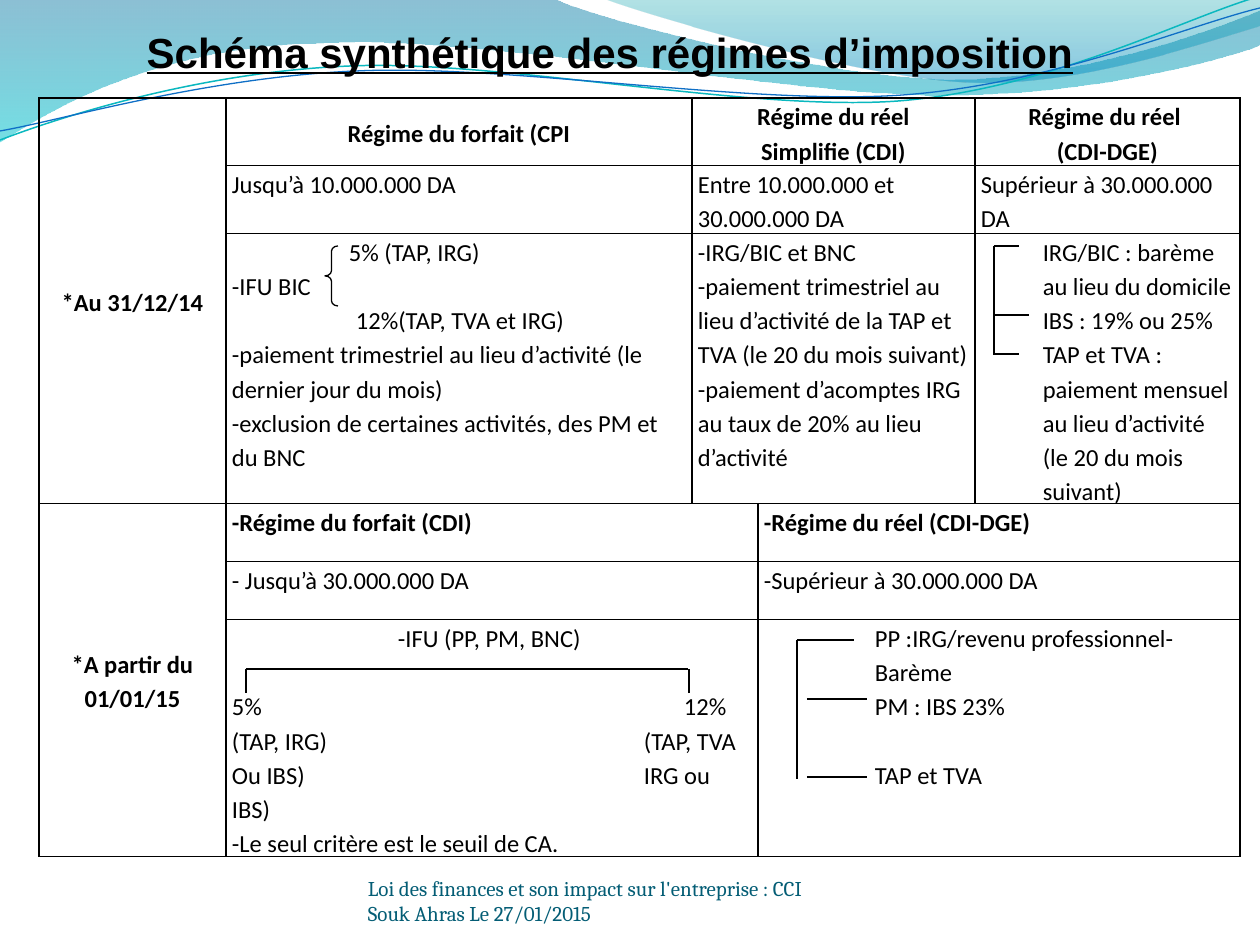
from dataclasses import dataclass

from lxml import etree
from pptx import Presentation
from pptx.dml.color import RGBColor
from pptx.enum.shapes import MSO_CONNECTOR, MSO_SHAPE
from pptx.enum.text import MSO_ANCHOR, PP_ALIGN
from pptx.oxml.ns import qn
from pptx.util import Emu, Pt

LEFT, CENTER = PP_ALIGN.LEFT, PP_ALIGN.CENTER
TOP, MIDDLE, BOTTOM = MSO_ANCHOR.TOP, MSO_ANCHOR.MIDDLE, MSO_ANCHOR.BOTTOM
STRAIGHT, LEFT_BRACE = MSO_CONNECTOR.STRAIGHT, MSO_SHAPE.LEFT_BRACE

CELL_INSET = 6
BLANK_LINE = 19.6  # points: one line of table text


def px(length):
    return Emu(round(length * 914400 / 126))


@dataclass(frozen=True)
class Theme:
    ink: str = "000000"
    footer_ink: str = "045D75"
    wave_teal: str = "0AB8BF"
    wave_blue: str = "0F6FC6"
    title_font: str = "Arial"
    table_font: str = "Calibri"
    footer_font: str = "Cambria"
    title_size: int = 24
    table_size: int = 14
    footer_size: int = 12
    border: float = 1
    rule: float = 0.75


@dataclass(frozen=True)
class Line:
    text: str
    indent: int = 0
    tab: int = 0
    before: float = 0


class SlideBuilder:
    def __init__(self, slide, theme):
        self.slide, self.theme = slide, theme

    def style(self, paragraph, font_name, size, color, bold=False, underline=None):
        font = paragraph.font
        font.name, font.size, font.bold = font_name, Pt(size), bold
        font.underline = underline
        font.color.rgb = RGBColor.from_string(color)

    def text(self, box, words, anchor, align, inset, **font):
        shape = self.slide.shapes.add_textbox(*map(px, box))
        frame = shape.text_frame
        frame.word_wrap, frame.vertical_anchor = True, anchor
        frame.margin_left = frame.margin_right = px(inset * 2)
        frame.margin_top = frame.margin_bottom = px(inset)
        paragraph = frame.paragraphs[0]
        paragraph.text, paragraph.alignment = words, align
        self.style(paragraph, **font)

    def outline(self, shape, color, width):
        shape.shadow.inherit = False
        shape.line.color.rgb = RGBColor.from_string(color)
        shape.line.width = Pt(width)

    def freeform(self, start, segments, closed):
        """Two numbers make a straight segment, six a Bézier curve."""
        points = [(px(x), px(y)) for segment in segments
                  for x, y in zip(segment[::2], segment[1::2])]
        builder = self.slide.shapes.build_freeform(*map(px, start))
        builder.add_line_segments(points, close=closed)
        shape = builder.convert_to_shape()
        shape.shadow.inherit = False
        # Gather the three points of each curve into one Bézier segment
        steps = iter(list(shape._element.iter(qn("a:lnTo"))))
        for segment in segments:
            step = next(steps)
            if len(segment) == 6:
                step.tag = qn("a:cubicBezTo")
                for extra in (next(steps), next(steps)):
                    step.append(extra[0])
                    extra.getparent().remove(extra)
        return shape

    def wave(self, start, segments, stops):
        shape = self.freeform(start, segments, True)
        shape.line.fill.background()
        shape.fill.gradient()
        shape.fill.gradient_angle = 270
        for stop, (position, color, _) in zip(shape.fill.gradient_stops, stops):
            stop.position = position
            stop.color.rgb = RGBColor.from_string(color)
        for node, (_, _, opacity) in zip(shape._element.iter(qn("a:srgbClr")), stops):
            etree.SubElement(node, qn("a:alpha"), val=str(opacity * 1000))

    def ribbon(self, start, segments, color, width):
        shape = self.freeform(start, segments, False)
        shape.fill.background()
        self.outline(shape, color, width)

    def connector(self, x1, y1, x2, y2):
        connector = self.slide.shapes.add_connector(STRAIGHT, px(x1), px(y1), px(x2), px(y2))
        connector.line.color.rgb = RGBColor.from_string(self.theme.ink)
        connector.line.width = Pt(self.theme.rule)
        etree.SubElement(connector._element.spPr, qn("a:effectLst"))

    def brace(self, box, bend):
        shape = self.slide.shapes.add_shape(LEFT_BRACE, *map(px, box))
        shape.adjustments[0] = bend
        shape.fill.background()
        self.outline(shape, self.theme.ink, self.theme.rule)

    def borders(self, cell):
        properties = cell._tc.get_or_add_tcPr()
        for side in ("a:lnL", "a:lnR", "a:lnT", "a:lnB"):
            line = etree.SubElement(properties, qn(side), w=str(Pt(self.theme.border)))
            fill = etree.SubElement(line, qn("a:solidFill"))
            etree.SubElement(fill, qn("a:srgbClr"), val=self.theme.ink)

    def table(self, left, top, columns, rows, cells):
        frame = self.slide.shapes.add_table(len(rows), len(columns), px(left), px(top),
                                            px(sum(columns)), px(sum(rows)))
        table = frame.table
        table.first_row = table.horz_banding = False
        for column, width in zip(table.columns, columns):
            column.width = px(width)
        for row, height in zip(table.rows, rows):
            row.height = px(height)
        for cell in table.iter_cells():
            self.borders(cell)
            cell.fill.background()
        for row, column, row_span, column_span, bold, centered, lines in cells:
            cell = table.cell(row, column)
            if row_span * column_span > 1:
                cell.merge(table.cell(row + row_span - 1, column + column_span - 1))
            self.fill_cell(cell, lines, bold, centered)

    def fill_cell(self, cell, lines, bold, centered):
        theme = self.theme
        cell.margin_left = cell.margin_right = px(CELL_INSET)
        cell.margin_top = cell.margin_bottom = 0
        cell.vertical_anchor = MIDDLE if centered else TOP
        frame = cell.text_frame
        for index, line in enumerate(lines):
            line = Line(line) if isinstance(line, str) else line
            paragraph = frame.add_paragraph() if index else frame.paragraphs[0]
            paragraph.text = line.text
            properties = paragraph._p.get_or_add_pPr()
            properties.set("marL", str(px(line.indent)))
            properties.set("indent", "0")
            if line.tab:
                properties.set("defTabSz", str(px(line.tab)))
            paragraph.alignment = CENTER if centered else LEFT
            paragraph.line_spacing = 1.15
            paragraph.space_before = Pt(line.before)
            self.style(paragraph, theme.table_font, theme.table_size, theme.ink, bold)


# row, column, row span, column span, bold, centered, lines
CELLS = [
    (0, 0, 3, 1, True, True, ["*Au 31/12/14"]),
    (0, 1, 1, 1, True, True, ["Régime du forfait (CPI"]),
    (0, 2, 1, 2, True, True, ["Régime du réel", "Simplifie (CDI)"]),
    (0, 4, 1, 1, True, True, ["Régime du réel ", "(CDI-DGE)"]),
    (1, 1, 1, 1, False, False, ["Jusqu’à 10.000.000 DA"]),
    (1, 2, 1, 2, False, False, ["Entre 10.000.000 et 30.000.000 DA"]),
    (1, 4, 1, 1, False, False, ["Supérieur à 30.000.000 DA"]),
    (2, 1, 1, 1, False, False, [
        Line("5% (TAP, IRG)", 117), "-IFU BIC", Line("12%(TAP, TVA et IRG)", 124),
        "-paiement trimestriel au lieu d’activité (le dernier jour du mois)",
        "-exclusion de certaines activités, des PM et du BNC"]),
    (2, 2, 1, 2, False, False, [
        "-IRG/BIC et BNC",
        "-paiement trimestriel au lieu d’activité de la TAP et TVA (le 20 du mois suivant)",
        "-paiement d’acomptes IRG au taux de 20% au lieu d’activité"]),
    (2, 4, 1, 1, False, False, [
        Line("IRG/BIC : barème au lieu du domicile", 62), Line("IBS : 19% ou 25%", 62),
        Line("TAP et TVA : paiement mensuel au lieu d’activité (le 20 du mois suivant)", 62)]),
    (3, 0, 3, 1, True, True, ["*A partir du", "01/01/15"]),
    (3, 1, 1, 2, True, False, ["-Régime du forfait (CDI)"]),
    (3, 3, 1, 2, True, False, ["-Régime du réel (CDI-DGE)"]),
    (4, 1, 1, 2, False, False, ["- Jusqu’à 30.000.000 DA"]),
    (4, 3, 1, 2, False, False, ["-Supérieur à 30.000.000 DA"]),
    (5, 1, 1, 2, False, False, [
        Line("-IFU (PP, PM, BNC)", 166), Line("5%\t12%", tab=452, before=BLANK_LINE),
        Line("(TAP, IRG)\t(TAP, TVA", tab=412), Line("Ou IBS)\tIRG ou\vIBS)", tab=412),
        "-Le seul critère est le seuil de CA."]),
    (5, 3, 1, 2, False, False, [
        Line("PP :IRG/revenu professionnel-Barème", 111), Line("PM : IBS 23%", 111),
        Line("TAP et TVA", 111, before=BLANK_LINE)]),
]

BRACKET_LINES = [
    (797, 640, 797, 779), (994, 354, 1019, 354), (994, 246, 1019, 246), (994, 315, 1029, 315),
    (246, 669, 688, 669), (689, 693, 689, 669), (246, 669, 246, 693), (994, 246, 994, 355),
    (807, 777, 867, 777), (807, 699, 867, 699), (797, 640, 854, 640),
]


def main():
    presentation = Presentation()
    presentation.slide_width, presentation.slide_height = px(1260), px(945)
    theme = Theme()
    builder = SlideBuilder(presentation.slides.add_slide(presentation.slide_layouts[6]), theme)

    # Waves behind the title
    builder.wave((0, 0), [(554, -1), (600, 21, 837, 79, 955, 79), (1074, 79, 1207, 33, 1260, 11),
                          (1261, 45), (1239, 55, 1096, 96, 940, 95), (784, 95, 481, 35, 324, 43),
                          (163, 45, 58, 105, -1, 142)],
                 [(0, "0074A1", 45), (1, "00C6CF", 55)])
    builder.wave((604, -1), [(641, 14, 859, 78, 969, 82), (1079, 87, 1211, 40, 1260, 26), (1260, 0)],
                 [(0, "00A1A9", 30), (0.8, "008BBF", 45)])
    builder.ribbon((0, 140), [(60, 117, 199, 72, 349, 66), (498, 59, 747, 112, 898, 101),
                              (1050, 89, 1182, 19, 1257, -3)], theme.wave_teal, 0.85)
    builder.ribbon((0, 131), [(59, 121, 207, 77, 357, 71), (508, 64, 752, 106, 903, 95),
                              (1053, 84, 1186, 26, 1260, 8)], theme.wave_blue, 0.75)

    # Title
    builder.text((118, 20, 984, 64), "Schéma synthétique des régimes d’imposition", MIDDLE, CENTER, 6,
                 font_name=theme.title_font, size=theme.title_size, color=theme.ink,
                 bold=True, underline=True)

    # Table of regimes, with its brace and brackets
    builder.table(39, 98, [187, 466, 66, 217, 265], [58, 58, 262, 58, 58, 175], CELLS)
    builder.brace((325, 246, 13, 60), 0.4)
    for ends in BRACKET_LINES:
        builder.connector(*ends)

    # Footer
    builder.text((368, 876, 462, 50),
                 "Loi des finances et son impact sur l'entreprise : CCI Souk Ahras Le 27/01/2015",
                 BOTTOM, LEFT, 0, font_name=theme.footer_font, size=theme.footer_size,
                 color=theme.footer_ink)
    presentation.save("out.pptx")


if __name__ == "__main__":
    main()
